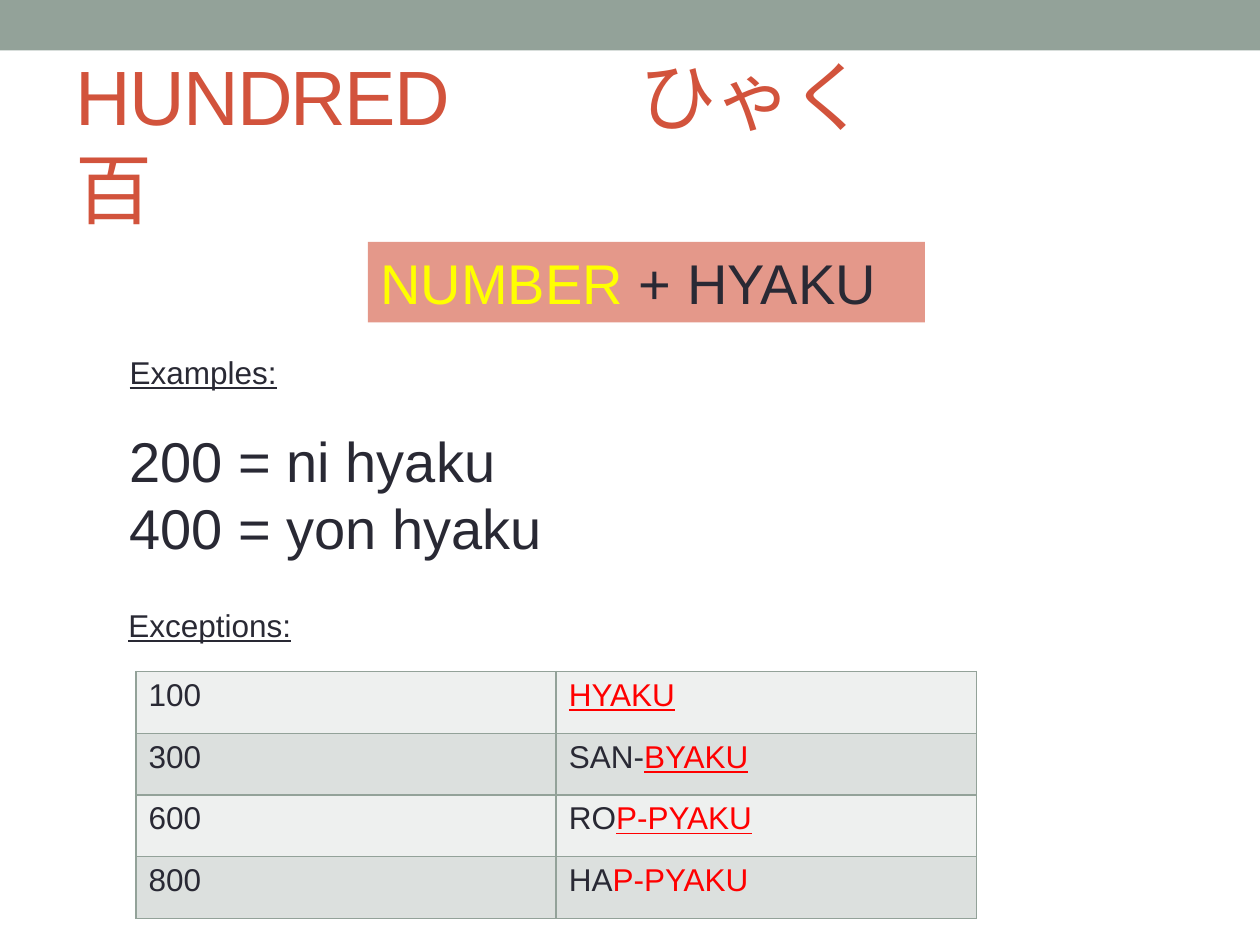
from lxml import etree
from pptx import Presentation
from pptx import util as u
from pptx.dml.color import RGBColor
from pptx.enum import shapes, text
from pptx.oxml import ns

SAGE = RGBColor(0x93, 0xA2, 0x99)
RUST = RGBColor(0xD2, 0x53, 0x3C)
SALMON = RGBColor(0xE4, 0x98, 0x8A)
INK = RGBColor(0x29, 0x29, 0x34)
YELLOW = RGBColor(0xFF, 0xFF, 0x00)
RED = RGBColor(0xFF, 0x00, 0x00)
ROW_FILLS = (RGBColor(0xEE, 0xF0, 0xEF), RGBColor(0xDC, 0xE0, 0xDE))

BODY = {"name": "Arial", "size": u.Pt(18)}
LARGE = {"name": "Arial", "size": u.Pt(32)}
TITLE = {"name": "Arial", "size": u.Pt(44)}
UNDERLINED = {**BODY, "underline": True}

EXCEPTIONS = [
    ("100", [("HYAKU", RED, UNDERLINED)]),
    ("300", [("SAN-", INK, BODY), ("BYAKU", RED, UNDERLINED)]),
    ("600", [("RO", INK, BODY), ("P-PYAKU", RED, UNDERLINED)]),
    ("800", [("HA", INK, BODY), ("P-PYAKU", RED, BODY)]),
]


def add_run(p, content, color, fmt):
    r = p.add_run()
    r.text = content
    for name, value in fmt.items():
        setattr(r.font, name, value)
    r.font.color.rgb = color
    return r


def add_text_box(s, box, **frame):
    tf = s.shapes.add_textbox(*map(u.Inches, box)).text_frame
    for name, value in {"word_wrap": True, **frame}.items():
        setattr(tf, name, value)
    return tf


def add_rect(s, box, color):
    sp = s.shapes.add_shape(shapes.MSO_SHAPE.RECTANGLE, *map(u.Inches, box))
    sp.shadow.inherit = False
    sp.fill.solid()
    sp.fill.fore_color.rgb = color
    sp.line.fill.background()
    return sp


def add_title(s, box):
    tf = add_text_box(s, box, vertical_anchor=text.MSO_ANCHOR.MIDDLE)
    p = tf.paragraphs[0]
    tabs = etree.SubElement(p._p.get_or_add_pPr(), ns.qn("a:tabLst"))
    etree.SubElement(tabs, ns.qn("a:tab"), pos=str(u.Inches(4.48)), algn="l")
    first = add_run(p, "HUNDRED\tひゃく", RUST, TITLE)
    p.add_line_break()
    second = add_run(p, "百", RUST, TITLE)
    for r in (first, second):
        r._r.get_or_add_rPr().set("spc", "-100")


def add_formula(s, box):
    tf = add_rect(s, box, SALMON).text_frame
    tf.word_wrap = True
    tf.vertical_anchor = text.MSO_ANCHOR.TOP
    p = tf.paragraphs[0]
    p.alignment = text.PP_ALIGN.LEFT
    add_run(p, "NUMBER", YELLOW, LARGE)
    add_run(p, " + HYAKU", INK, LARGE)


def add_examples(s, box):
    tf = add_text_box(s, box)
    p = tf.paragraphs[0]
    p.space_after = u.Pt(20.7)
    add_run(p, "Examples:", INK, UNDERLINED)
    for line in ("200 = ni hyaku", "400 = yon hyaku"):
        add_run(tf.add_paragraph(), line, INK, LARGE)


def add_exceptions_label(s, box):
    tf = add_text_box(s, box, word_wrap=False)
    add_run(tf.paragraphs[0], "Exceptions:", INK, UNDERLINED)


def style_cell(cell, color):
    tcPr = cell._tc.get_or_add_tcPr()
    for side in ("a:lnL", "a:lnR", "a:lnT", "a:lnB"):
        ln = etree.SubElement(tcPr, ns.qn(side), w=str(u.Pt(1)))
        fill = etree.SubElement(ln, ns.qn("a:solidFill"))
        etree.SubElement(fill, ns.qn("a:srgbClr"), val=str(SAGE))
    cell.fill.solid()
    cell.fill.fore_color.rgb = color


def add_exceptions_table(s, box):
    table = s.shapes.add_table(len(EXCEPTIONS), 2, *map(u.Inches, box)).table
    for i, (number, reading) in enumerate(EXCEPTIONS):
        for j, runs in enumerate(([(number, INK, BODY)], reading)):
            cell = table.cell(i, j)
            style_cell(cell, ROW_FILLS[i % 2])
            for run in runs:
                add_run(cell.text_frame.paragraphs[0], *run)


def main():
    prs = Presentation()
    prs.slide_width, prs.slide_height = u.Inches(10), u.Inches(7.5)
    s = prs.slides.add_slide(prs.slide_layouts[6])
    add_rect(s, (0, 0, 10, 0.4), SAGE)
    add_title(s, (0.5, 0.58, 9, 1.08))
    add_exceptions_table(s, (1.08, 5.33, 6.67, 1.96))
    add_formula(s, (2.92, 1.92, 4.42, 0.64))
    add_exceptions_label(s, (0.92, 4.76, 1.51, 0.4))
    add_examples(s, (0.93, 2.75, 6.57, 1.78))
    prs.save("out.pptx")


if __name__ == "__main__":
    main()
